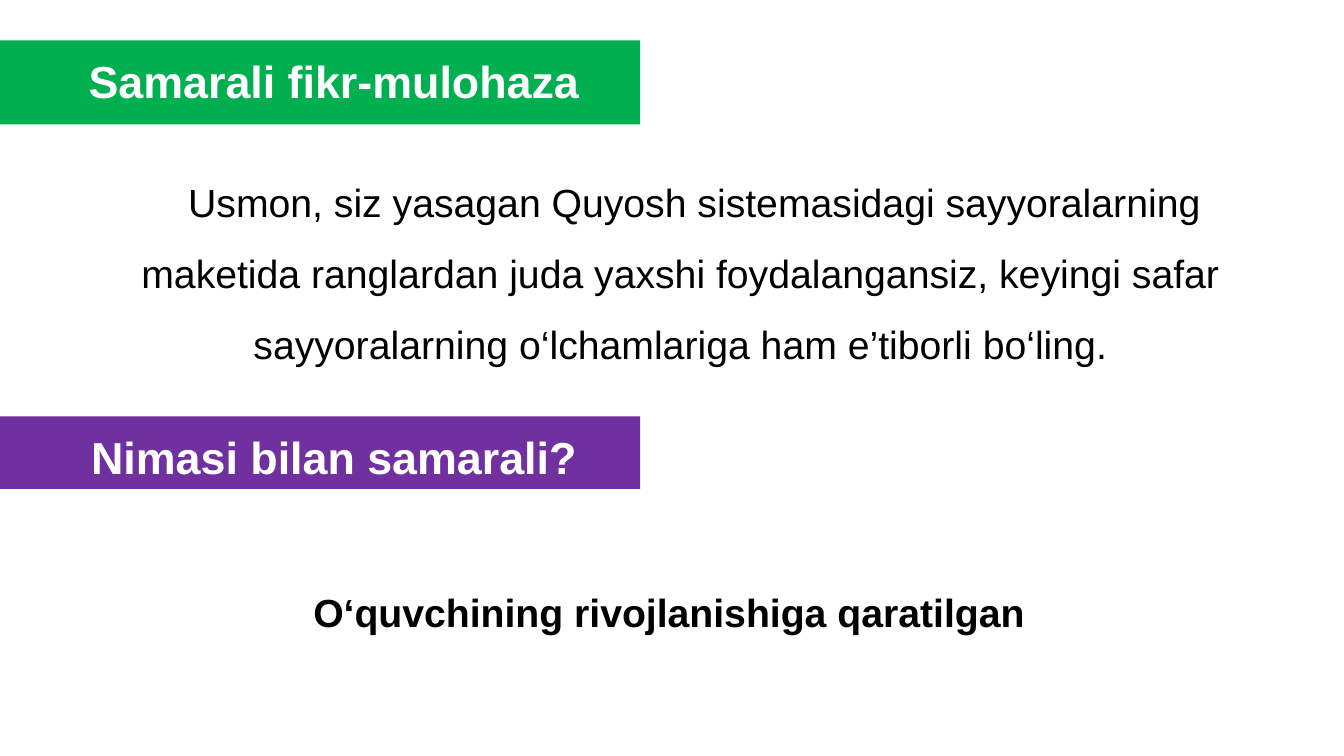
import pptx
import pptx.util
import pptx.dml.color
import pptx.enum.shapes
import pptx.enum.text

Inches = pptx.util.Inches
COLORS = {
    "green": "00B050",
    "purple": "7030A0",
    "white": "FFFFFF",
    "black": "000000",
}


def color(name):
    return pptx.dml.color.RGBColor.from_string(COLORS[name])


def place(shape, left, top, width, height):
    shape.left, shape.top = Inches(left), Inches(top)
    shape.width, shape.height = Inches(width), Inches(height)


def write(shape, text, size=28, bold=False, ink="black", space=1.15):
    """Fill a shape with one centred paragraph, its first line indented."""
    frame = shape.text_frame
    frame.word_wrap = True
    frame.auto_size = pptx.enum.text.MSO_AUTO_SIZE.SHAPE_TO_FIT_TEXT
    frame.vertical_anchor = pptx.enum.text.MSO_ANCHOR.TOP
    para = frame.paragraphs[0]
    para.alignment = pptx.enum.text.PP_ALIGN.CENTER
    para.line_spacing = space
    props = para._p.get_or_add_pPr()
    props.set("marL", "0")
    props.set("indent", str(Inches(0.28)))
    run = para.add_run()
    run.text = text
    font = run.font
    font.name, font.size, font.bold = "Arial", pptx.util.Pt(size), bold
    font.color.rgb = color(ink)


def banner(shape, text, top, height, fill):
    """Style a shape as a heading bar that starts at the left edge."""
    place(shape, 0, top, 6.35, height)
    shape.fill.solid()
    shape.fill.fore_color.rgb = color(fill)
    shape.line.fill.background()
    write(shape, text, size=32, bold=True, ink="white")


def note(slide, text, box, **style):
    shape = slide.shapes.add_textbox(*map(Inches, box))
    write(shape, text, **style)


def main():
    deck = pptx.Presentation()
    deck.slide_width, deck.slide_height = Inches(13.33), Inches(7.5)
    slide = deck.slides.add_slide(deck.slide_layouts[5])

    banner(slide.shapes.title, "Samarali fikr-mulohaza", 0.4, 0.66, "green")
    note(
        slide,
        "Usmon, siz yasagan Quyosh sistemasidagi sayyoralarning maketida "
        "ranglardan juda yaxshi foydalangansiz, keyingi safar "
        "sayyoralarning o‘lchamlariga ham e’tiborli bo‘ling.",
        (0.68, 1.49, 12.13, 2.22),
        space=1.5,
    )

    bar = slide.shapes.add_shape(
        pptx.enum.shapes.MSO_SHAPE.RECTANGLE, 0, 0, 0, 0
    )
    bar.shadow.inherit = False
    banner(bar, "Nimasi bilan samarali?", 4.13, 0.72, "purple")
    note(
        slide,
        "O‘quvchining rivojlanishiga qaratilgan",
        (2.02, 5.72, 8.95, 0.6),
        bold=True,
    )
    deck.save("out.pptx")


if __name__ == "__main__":
    main()
